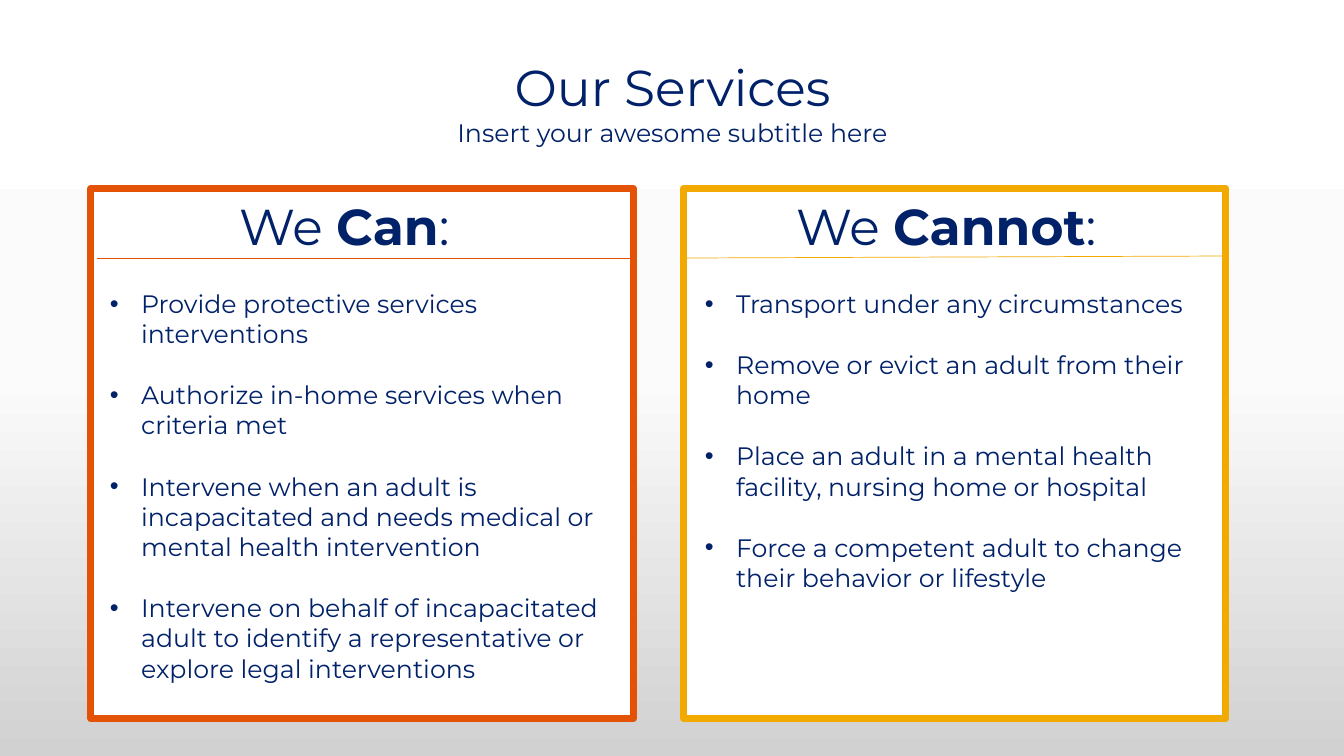
from copy import deepcopy

from pptx import Presentation
from pptx.dml.color import RGBColor
from pptx.enum.shapes import MSO_CONNECTOR as Connector, MSO_SHAPE as Shape
from pptx.enum.text import MSO_ANCHOR as Anchor, MSO_AUTO_SIZE as AutoSize, PP_ALIGN as Align
from pptx.oxml.ns import qn
from pptx.oxml.xmlchemy import OxmlElement
from pptx.util import Inches, Pt

NAVY, ORANGE, GOLD, WHITE = "012169", "E35205", "F2A900", "FFFFFF"
COMPARISON_LAYOUT = 4
PANEL_WIDTH, PANEL_HEIGHT, PANEL_TOP = 5.38, 5.26, 1.87

CAN = {
    "word": "Can", "color": ORANGE,
    "heading": (0.77, 3.49), "rule": (0.06, 0.69, 0.69), "list": (0.09, 5.16),
    "items": [
        "Provide protective services interventions",
        "Authorize in-home services when criteria met",
        "Intervene when an adult is incapacitated and needs medical or mental health intervention",
        "Intervene on behalf of incapacitated adult to identify a representative or "
        "explore legal interventions",
    ],
}
CANNOT = {
    "word": "Cannot", "color": GOLD,
    "heading": (0.99, 3.23), "rule": (-0.03, 0.69, 0.67), "list": (0.11, 4.98),
    "items": [
        "Transport under any circumstances",
        "Remove or evict an adult from their home",
        "Place an adult in a mental health facility, nursing home or hospital",
        "Force a competent adult to change their behavior or lifestyle",
    ],
}


def rgb(color):
    """Turn a hex string into a colour."""
    return RGBColor.from_string(color)


def place(shape, left, top, width, height):
    """Move and size a shape, in inches."""
    shape.left, shape.top = Inches(left), Inches(top)
    shape.width, shape.height = Inches(width), Inches(height)


def set_bullet(paragraph, indent=0.31):
    """Give a paragraph a round bullet with a hanging indent."""
    properties = paragraph._p.get_or_add_pPr()
    properties.set("marL", str(Inches(indent)))
    properties.set("indent", str(-Inches(indent)))
    font, character = OxmlElement("a:buFont"), OxmlElement("a:buChar")
    font.set("typeface", "Arial")
    character.set("char", "•")
    properties.extend([font, character])


def write(shape, paragraphs, size=18, align=Align.CENTER, anchor=Anchor.TOP,
          line_spacing=1.0, gap=0, bullets=False):
    """Fill a shape with paragraphs, each a list of (text, bold) runs."""
    frame = shape.text_frame
    frame.word_wrap, frame.auto_size = True, AutoSize.NONE
    frame.vertical_anchor = anchor
    for index, runs in enumerate(paragraphs):
        paragraph = frame.add_paragraph() if index else frame.paragraphs[0]
        paragraph.alignment, paragraph.line_spacing = align, line_spacing
        paragraph.space_before, paragraph.space_after = Pt(gap if index else 0), Pt(0)
        if bullets:
            set_bullet(paragraph)
        for text, bold in runs:
            run = paragraph.add_run()
            run.text = text
            run.font.name, run.font.size, run.font.bold = "Montserrat", Pt(size), bold
            run.font.color.rgb = rgb(NAVY)


def paint_background(slide):
    """Shade the slide from white down to grey."""
    fill = slide.background.fill
    fill.gradient()
    fill.gradient_angle = 270
    first_stop = next(slide.element.iter(qn("a:gs")))
    first_stop.addnext(deepcopy(first_stop))
    stops = [(0, WHITE), (0.5, "FBFBFB"), (1, "D1D1D1")]
    for stop, (position, color) in zip(fill.gradient_stops, stops):
        stop.position, stop.color.rgb = position, rgb(color)


def add_header(slide, left, top, width):
    """Place the title and the subtitle under it."""
    title = slide.shapes.title
    place(title, left, top, width, 0.97)
    write(title, [[("Our Services", False)]], size=36, anchor=Anchor.MIDDLE, line_spacing=0.9)
    subtitle = slide.shapes.add_textbox(
        Inches(left + 0.75), Inches(top + 0.74), Inches(width - 1.5), Inches(0.48))
    write(subtitle, [[("Insert your awesome subtitle here", False)]], line_spacing=0.9)


def add_panel(slide, left, top, width, height, panel, heading, body):
    """Place a framed panel with its heading, rule and bulleted list."""
    frame = slide.shapes.add_shape(
        Shape.RECTANGLE, Inches(left), Inches(top), Inches(width), Inches(height))
    frame.shadow.inherit = False
    frame.fill.solid()
    frame.fill.fore_color.rgb = rgb(WHITE)
    frame.line.color.rgb, frame.line.width = rgb(panel["color"]), Pt(5)
    heading.element.addprevious(frame.element)

    offset, heading_width = panel["heading"]
    place(heading, left + offset, top + 0.02, heading_width, 0.71)
    write(heading, [[("We ", False), (panel["word"], True), (":", False)]], size=36)

    offset, start, end = panel["rule"]
    rule = slide.shapes.add_connector(
        Connector.STRAIGHT, Inches(left + offset), Inches(top + start),
        Inches(left + width), Inches(top + end))
    rule.line.color.rgb, rule.line.width = rgb(panel["color"]), Pt(0.5)
    rule.element.spPr.append(OxmlElement("a:effectLst"))

    offset, list_width = panel["list"]
    place(body, left + offset, top + 0.94, list_width, 4.04)
    write(body, [[(item, False)] for item in panel["items"]],
          align=Align.LEFT, gap=22, bullets=True)


def main():
    """Build the slide and save it."""
    presentation = Presentation()
    presentation.slide_width, presentation.slide_height = Inches(13.33), Inches(7.5)
    slide = presentation.slides.add_slide(presentation.slide_layouts[COMPARISON_LAYOUT])
    paint_background(slide)
    add_header(slide, 0.92, 0.41, 11.5)
    _, can_heading, can_list, cannot_heading, cannot_list = slide.placeholders
    add_panel(slide, 0.9, PANEL_TOP, PANEL_WIDTH, PANEL_HEIGHT, CAN, can_heading, can_list)
    add_panel(slide, 6.78, PANEL_TOP, PANEL_WIDTH, PANEL_HEIGHT, CANNOT,
              cannot_heading, cannot_list)
    presentation.save("out.pptx")


if __name__ == "__main__":
    main()
